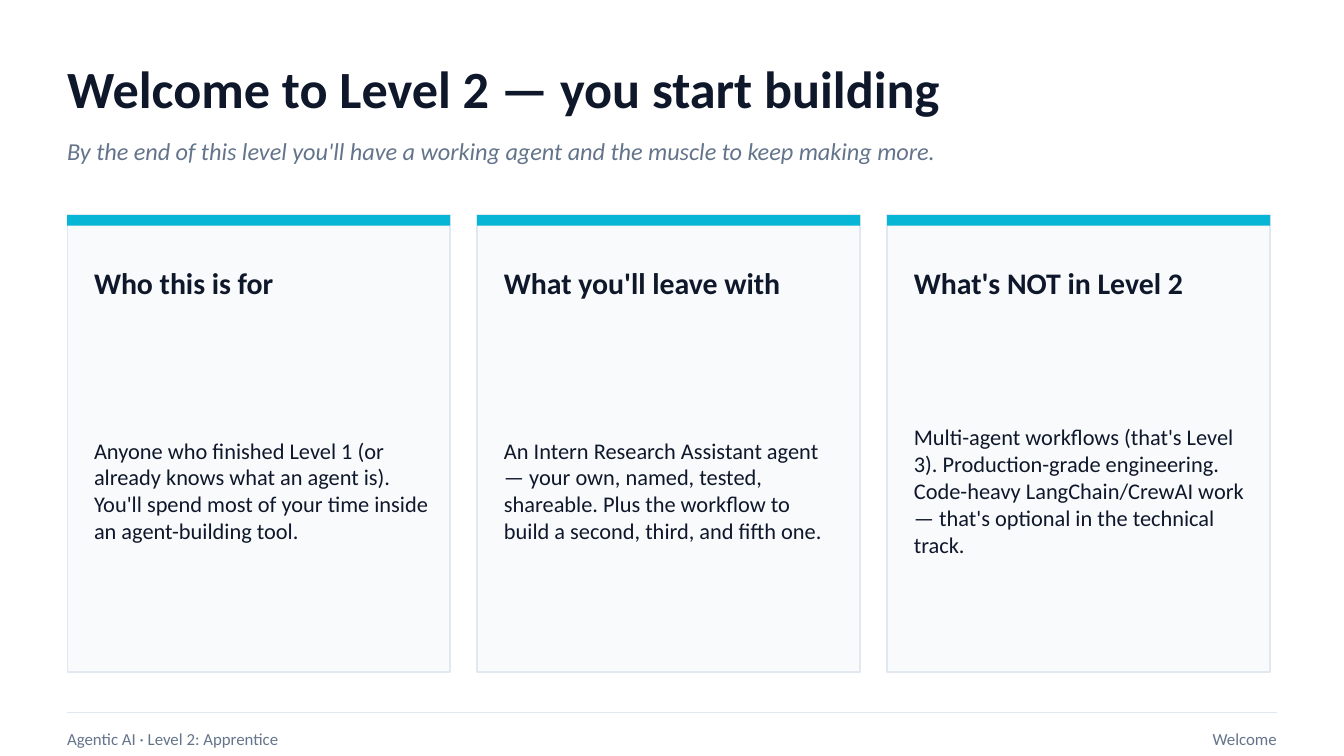
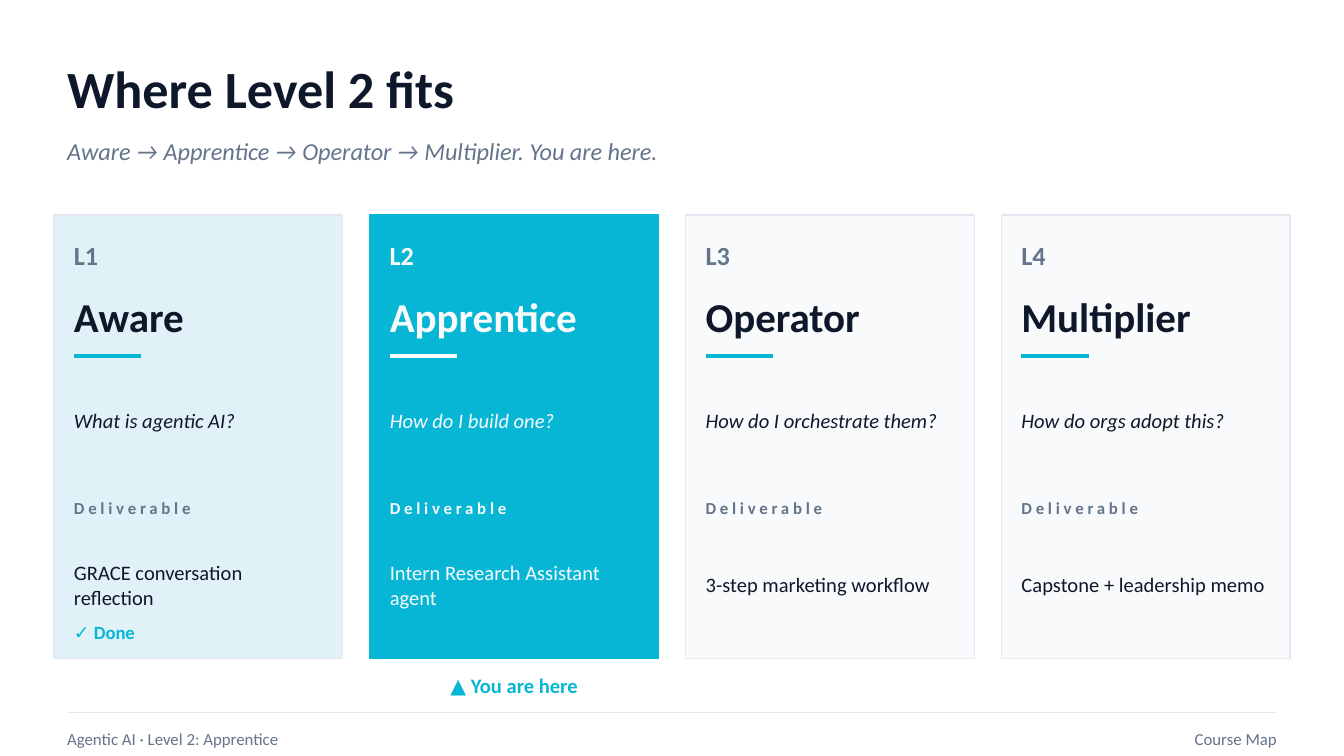
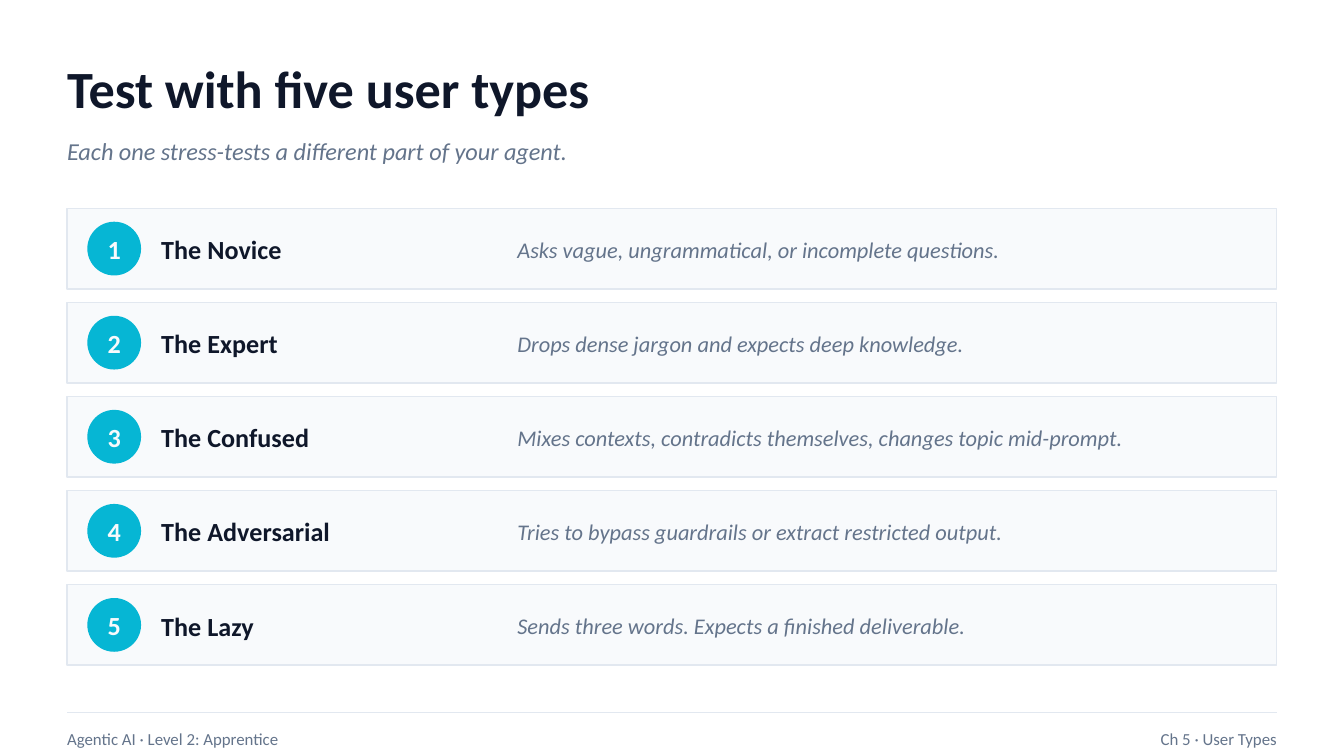
from pptx import Presentation
from pptx.dml.color import RGBColor
from pptx.enum.shapes import MSO_CONNECTOR, MSO_SHAPE
from pptx.enum.text import MSO_ANCHOR, MSO_AUTO_SIZE, PP_ALIGN
from pptx.oxml.ns import qn
from pptx.util import Inches, Pt

RECT, OVAL = MSO_SHAPE.RECTANGLE, MSO_SHAPE.OVAL
STRAIGHT = MSO_CONNECTOR.STRAIGHT
MIDDLE, NO_FIT = MSO_ANCHOR.MIDDLE, MSO_AUTO_SIZE.NONE
LEFT, CENTER, RIGHT = PP_ALIGN.LEFT, PP_ALIGN.CENTER, PP_ALIGN.RIGHT

FONT = "Calibri"
INK, MUTED, ACCENT = "0F172A", "64748B", "06B6D4"
PANEL, BORDER, DONE_TINT, WHITE = "F8FAFC", "E2E8F0", "E0F2F7", "FFFFFF"
MARGIN, CONTENT_W = 0.5, 9
TITLE_ONLY = 5
COURSE = "Agentic AI · Level 2: Apprentice"


def rgb(hex_color):
    return RGBColor.from_string(hex_color)


class Deck:
    """Holds the shared style and the slide being built."""

    def __init__(self):
        self.prs = Presentation()
        self.prs.slide_width = Inches(10)
        self.prs.slide_height = Inches(5.625)
        self.slide = None

    def start_slide(self, title, subtitle, section):
        self.slide = self.prs.slides.add_slide(self.prs.slide_layouts[TITLE_ONLY])
        fill = self.slide.background.fill
        fill.solid()
        fill.fore_color.rgb = rgb(WHITE)
        sp = self.slide.shapes.title
        sp.left, sp.top = Inches(MARGIN), Inches(0.35)
        sp.width, sp.height = Inches(CONTENT_W), Inches(0.6)
        self.set_text(sp, title, 28, bold=True)
        self.text(MARGIN, 0.95, CONTENT_W, 0.35, subtitle, 13, MUTED, italic=True)
        self.line(MARGIN, 5.3, CONTENT_W, BORDER, 0.75)
        self.text(MARGIN, 5.35, 5, 0.3, COURSE, 9, MUTED)
        self.text(5.5, 5.35, 4, 0.3, section, 9, MUTED, align=RIGHT)

    def set_text(self, sp, text, size, color=INK, bold=False, italic=False,
                 align=LEFT, spacing=0):
        """Put one styled line of text in a shape; spacing is in points."""
        tf = sp.text_frame
        tf.text = text
        tf.auto_size = NO_FIT
        tf.word_wrap = True
        tf.vertical_anchor = MIDDLE
        tf.margin_left = tf.margin_top = tf.margin_right = tf.margin_bottom = 0
        p = tf.paragraphs[0]
        p.alignment = align
        r = p.runs[0]
        r.font.name = FONT
        r.font.size = Pt(size)
        r.font.bold = bold
        r.font.italic = italic
        r.font.color.rgb = rgb(color)
        if spacing:
            r.font._element.set("spc", str(spacing * 100))

    def text(self, x, y, w, h, text, size, color=INK, **style):
        sp = self.slide.shapes.add_textbox(Inches(x), Inches(y), Inches(w), Inches(h))
        self.set_text(sp, text, size, color, **style)

    def shape(self, kind, x, y, w, h, fill, border=None):
        sp = self.slide.shapes.add_shape(kind, Inches(x), Inches(y), Inches(w), Inches(h))
        sp.shadow.inherit = False
        sp.fill.solid()
        sp.fill.fore_color.rgb = rgb(fill)
        if border:
            sp.line.color.rgb = rgb(border)
            sp.line.width = Pt(0.75)
        else:
            sp.line.fill.background()
        return sp

    def line(self, x, y, length, color, width):
        """Draw a horizontal rule."""
        cxn = self.slide.shapes.add_connector(
            STRAIGHT, Inches(x), Inches(y), Inches(x + length), Inches(y))
        cxn.line.color.rgb = rgb(color)
        cxn.line.width = Pt(width)
        sp_pr = cxn._element.spPr
        sp_pr.append(sp_pr.makeelement(qn("a:effectLst"), {}))

    def topic_card(self, x, heading, body):
        y, w = 1.6, 2.85
        self.shape(RECT, x, y, w, 3.4, PANEL, BORDER)
        self.shape(RECT, x, y, w, 0.08, ACCENT)
        self.text(x + 0.2, y + 0.25, 2.5, 0.5, heading, 16, bold=True)
        self.text(x + 0.2, y + 0.85, 2.5, 2.4, body, 12)

    def level_card(self, x, code, name, question, deliverable, status):
        y, w = 1.6, 2.15
        current = status == "current"
        fill = {"current": ACCENT, "done": DONE_TINT}.get(status, PANEL)
        ink, muted, accent = (PANEL,) * 3 if current else (INK, MUTED, ACCENT)
        inner_x, inner_w = x + 0.15, w - 0.3
        self.shape(RECT, x, y, w, 3.3, fill, ACCENT if current else BORDER)
        self.text(inner_x, 1.7, 1, 0.4, code, 14, muted, bold=True)
        self.text(inner_x, 2.1, inner_w, 0.5, name, 22, ink, bold=True)
        self.line(inner_x, 2.65, 0.5, accent, 2)
        self.text(inner_x, 2.78, inner_w, 0.7, question, 11, ink, italic=True)
        self.text(inner_x, 3.65, inner_w, 0.25, "Deliverable", 9, muted,
                  bold=True, spacing=2)
        self.text(inner_x, 3.9, inner_w, 0.9, deliverable, 11, ink)
        if status == "done":
            self.text(inner_x, 4.55, inner_w, 0.3, "✓ Done", 10, ACCENT, bold=True)
        if current:
            self.text(x, 4.95, w, 0.3, "▲ You are here", 11, ACCENT,
                      bold=True, align=CENTER)

    def user_row(self, y, number, name, behaviour):
        self.shape(RECT, MARGIN, y, CONTENT_W, 0.6, PANEL, BORDER)
        badge = self.shape(OVAL, 0.65, y + 0.1, 0.4, 0.4, ACCENT)
        self.set_text(badge, str(number), 14, PANEL, bold=True, align=CENTER)
        self.text(1.2, y + 0.08, 2.6, 0.45, name, 14, bold=True)
        self.text(3.85, y + 0.08, 5.5, 0.45, behaviour, 12, MUTED, italic=True)


TOPICS = [
    ("Who this is for",
     "Anyone who finished Level 1 (or already knows what an agent is). "
     "You'll spend most of your time inside an agent-building tool."),
    ("What you'll leave with",
     "An Intern Research Assistant agent — your own, named, tested, shareable. "
     "Plus the workflow to build a second, third, and fifth one."),
    ("What's NOT in Level 2",
     "Multi-agent workflows (that's Level 3). Production-grade engineering. "
     "Code-heavy LangChain/CrewAI work — that's optional in the technical track."),
]
LEVELS = [
    ("L1", "Aware", "What is agentic AI?", "GRACE conversation reflection", "done"),
    ("L2", "Apprentice", "How do I build one?", "Intern Research Assistant agent",
     "current"),
    ("L3", "Operator", "How do I orchestrate them?", "3-step marketing workflow",
     "ahead"),
    ("L4", "Multiplier", "How do orgs adopt this?", "Capstone + leadership memo",
     "ahead"),
]
USERS = [
    ("The Novice", "Asks vague, ungrammatical, or incomplete questions."),
    ("The Expert", "Drops dense jargon and expects deep knowledge."),
    ("The Confused", "Mixes contexts, contradicts themselves, changes topic mid-prompt."),
    ("The Adversarial", "Tries to bypass guardrails or extract restricted output."),
    ("The Lazy", "Sends three words. Expects a finished deliverable."),
]


def main():
    deck = Deck()

    deck.start_slide(
        "Welcome to Level 2 — you start building",
        "By the end of this level you'll have a working agent and the muscle "
        "to keep making more.",
        "Welcome")
    for i, topic in enumerate(TOPICS):
        deck.topic_card(MARGIN + i * 3.05, *topic)

    deck.start_slide(
        "Where Level 2 fits",
        "Aware → Apprentice → Operator → Multiplier. You are here.",
        "Course Map")
    for i, level in enumerate(LEVELS):
        deck.level_card(0.4 + i * 2.35, *level)

    deck.start_slide(
        "Test with five user types",
        "Each one stress-tests a different part of your agent.",
        "Ch 5 · User Types")
    for i, user in enumerate(USERS):
        deck.user_row(1.55 + i * 0.7, i + 1, *user)

    deck.prs.save("out.pptx")


if __name__ == "__main__":
    main()
